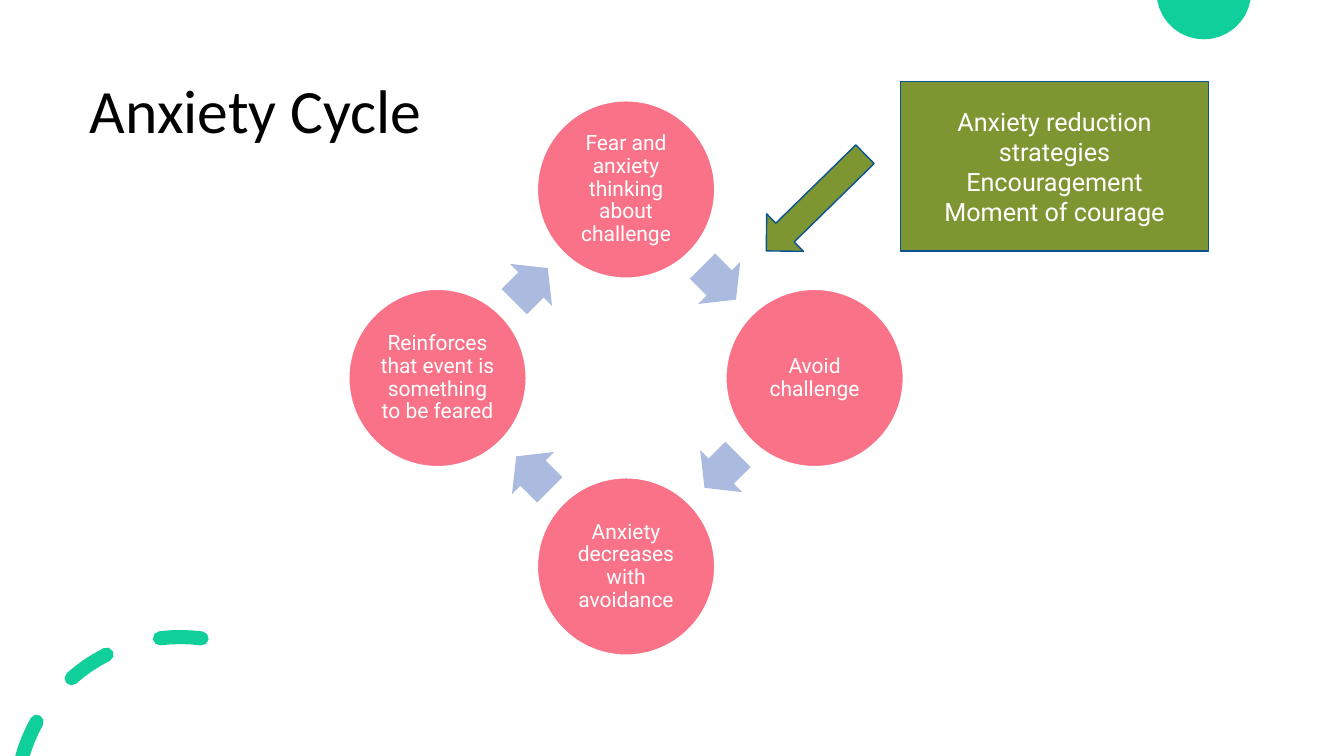
from math import acos, cos, degrees, radians, sin

from pptx import Presentation
from pptx.dml.color import RGBColor
from pptx.enum import shapes, text
from pptx.util import Inches, Pt

TITLE = "Anxiety Cycle"
STAGES = [
    "Fear and anxiety thinking about challenge",
    "Avoid challenge",
    "Anxiety decreases with avoidance",
    "Reinforces that event is something to be feared",
]
HELP = ["Anxiety reduction strategies", "Encouragement", "Moment of courage"]
COLORS = {
    "accent": "10CF9B", "stage": "F97287", "step": "ABBBDF", "help": "7E9632",
    "help_line": "0B5292", "white": "FFFFFF", "black": "000000",
}
WIDTH, HEIGHT = 13.33, 7.5
UNITS = 1000  # outline grid steps per inch
CYCLE_CENTER, CYCLE_RADIUS = (6.21, 3.75), 1.87
STAGE_SIZE = 1.76
STEP_SIZE, STEP_RADIUS, STEP_ANGLE = (0.47, 0.59), 1.32, 44.4
# Corner decorations: angles run clockwise from straight up
DISC_CENTER, DISC_RADIUS = (11.94, -0.08), 0.47
RING_CENTER, RING_RADIUS, RING_HALF = (1.79, 7.95), 1.63, 0.07
DASHES = [(-90, -61), (-41.5, -26.7), (-7.2, 7.4)]


def color(name):
    return RGBColor.from_string(COLORS[name])


def polar(center, radius, angle):
    turn = radians(angle)
    return center[0] + radius * sin(turn), center[1] - radius * cos(turn)


def arc(center, radius, start, end, steps=4):
    return [polar(center, radius, start + (end - start) * i / steps)
            for i in range(steps + 1)]


def dash_outline(start, end):
    """Round-ended piece of the ring, cut off flat at the slide bottom."""
    outer, inner = RING_RADIUS + RING_HALF, RING_RADIUS - RING_HALF
    drop = RING_CENTER[1] - HEIGHT
    outer_start, inner_start = (max(start, -degrees(acos(drop / radius)))
                                for radius in (outer, inner))
    points = arc(RING_CENTER, outer, outer_start, end)
    points += arc(polar(RING_CENTER, RING_RADIUS, end), RING_HALF, end, end + 180)[1:-1]
    points += arc(RING_CENTER, inner, end, inner_start)
    if outer_start == start:
        points += arc(polar(RING_CENTER, RING_RADIUS, start), RING_HALF,
                      start + 180, start + 360)[1:-1]
    return points


def paint(shape, fill, line=None):
    shape.shadow.inherit = False
    shape.fill.solid()
    shape.fill.fore_color.rgb = color(fill)
    if line:
        shape.line.color.rgb = color(line)
        shape.line.width = Pt(1)
    else:
        shape.line.fill.background()


def add_outline(page, contours):
    grid = [[(round(x * UNITS), round(y * UNITS)) for x, y in points]
            for points in contours]
    builder = page.shapes.build_freeform(*grid[0][0], scale=Inches(1) / UNITS)
    for i, points in enumerate(grid):
        if i:
            builder.move_to(*points[0])
        builder.add_line_segments(points[1:], close=True)
    paint(builder.convert_to_shape(), "accent")


def add_centered(page, kind, center, size, fill, line=None, rotation=0):
    width, height = size
    shape = page.shapes.add_shape(
        kind, Inches(center[0] - width / 2), Inches(center[1] - height / 2),
        Inches(width), Inches(height))
    shape.rotation = rotation
    paint(shape, fill, line)
    return shape


def write(shape, lines, size, font, ink, align, spacing=1.0):
    frame = shape.text_frame
    frame.text = "\n".join(lines)
    frame.word_wrap = True
    frame.auto_size = text.MSO_AUTO_SIZE.NONE
    frame.vertical_anchor = text.MSO_ANCHOR.MIDDLE
    for para in frame.paragraphs:
        para.alignment = align
        para.line_spacing = spacing
        for span in para.runs:
            span.font.size = Pt(size)
            span.font.name = font
            span.font.color.rgb = color(ink)


def main():
    deck = Presentation()
    deck.slide_width, deck.slide_height = Inches(WIDTH), Inches(HEIGHT)
    page = deck.slides.add_slide(deck.slide_layouts[5])
    kinds, align = shapes.MSO_SHAPE, text.PP_ALIGN

    edge = degrees(acos(DISC_CENTER[1] / DISC_RADIUS))
    add_outline(page, [arc(DISC_CENTER, DISC_RADIUS, edge, 360 - edge, 16)])
    add_outline(page, [dash_outline(*dash) for dash in DASHES])

    title = page.shapes.title
    title.left, title.top = Inches(0.79), Inches(0.4)
    title.width, title.height = Inches(11.5), Inches(1.45)
    write(title, [TITLE], 44, "Calibri", "black", align.LEFT, 0.9)

    for i, stage in enumerate(STAGES):
        angle = i * 360 / len(STAGES)
        circle = add_centered(page, kinds.OVAL, polar(CYCLE_CENTER, CYCLE_RADIUS, angle),
                              (STAGE_SIZE, STAGE_SIZE), "stage", "white")
        frame = circle.text_frame
        frame.margin_left = frame.margin_right = Inches(0.02)
        frame.margin_top = frame.margin_bottom = Inches(0.02)
        write(circle, [stage], 15, "Roboto", "white", align.CENTER, 0.9)
        step = add_centered(page, kinds.RIGHT_ARROW,
                            polar(CYCLE_CENTER, STEP_RADIUS, angle + STEP_ANGLE),
                            STEP_SIZE, "step", rotation=angle + 45)
        step.adjustments[0] = 0.6

    panel = add_centered(page, kinds.RECTANGLE, (10.46, 1.65), (3.06, 1.68),
                         "help", "help_line")
    write(panel, HELP, 18, "Roboto", "white", align.CENTER)
    add_centered(page, kinds.LEFT_ARROW, (8.09, 2.01), (1.37, 0.52),
                 "help", "help_line", 315.6)

    deck.save("out.pptx")


if __name__ == "__main__":
    main()
